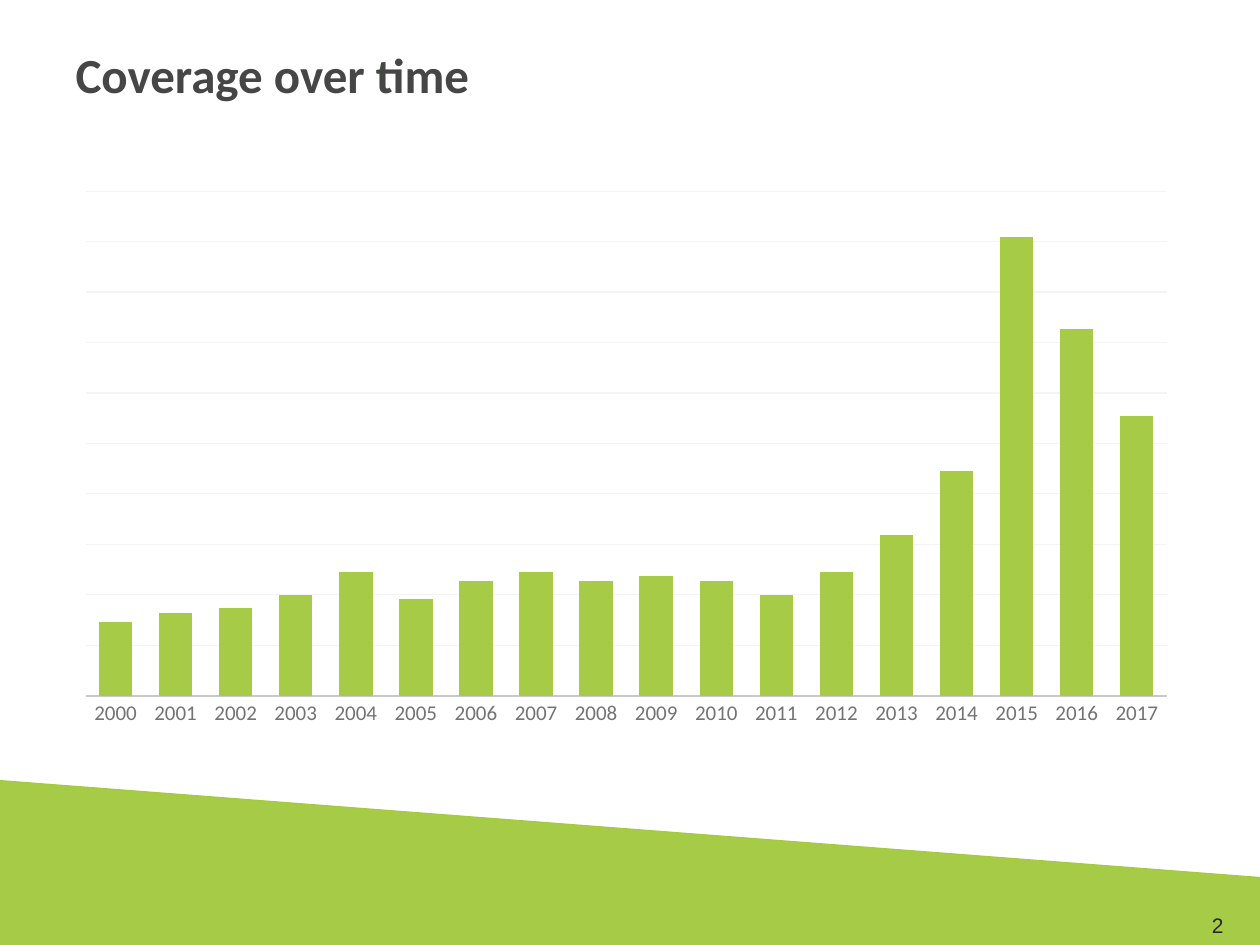
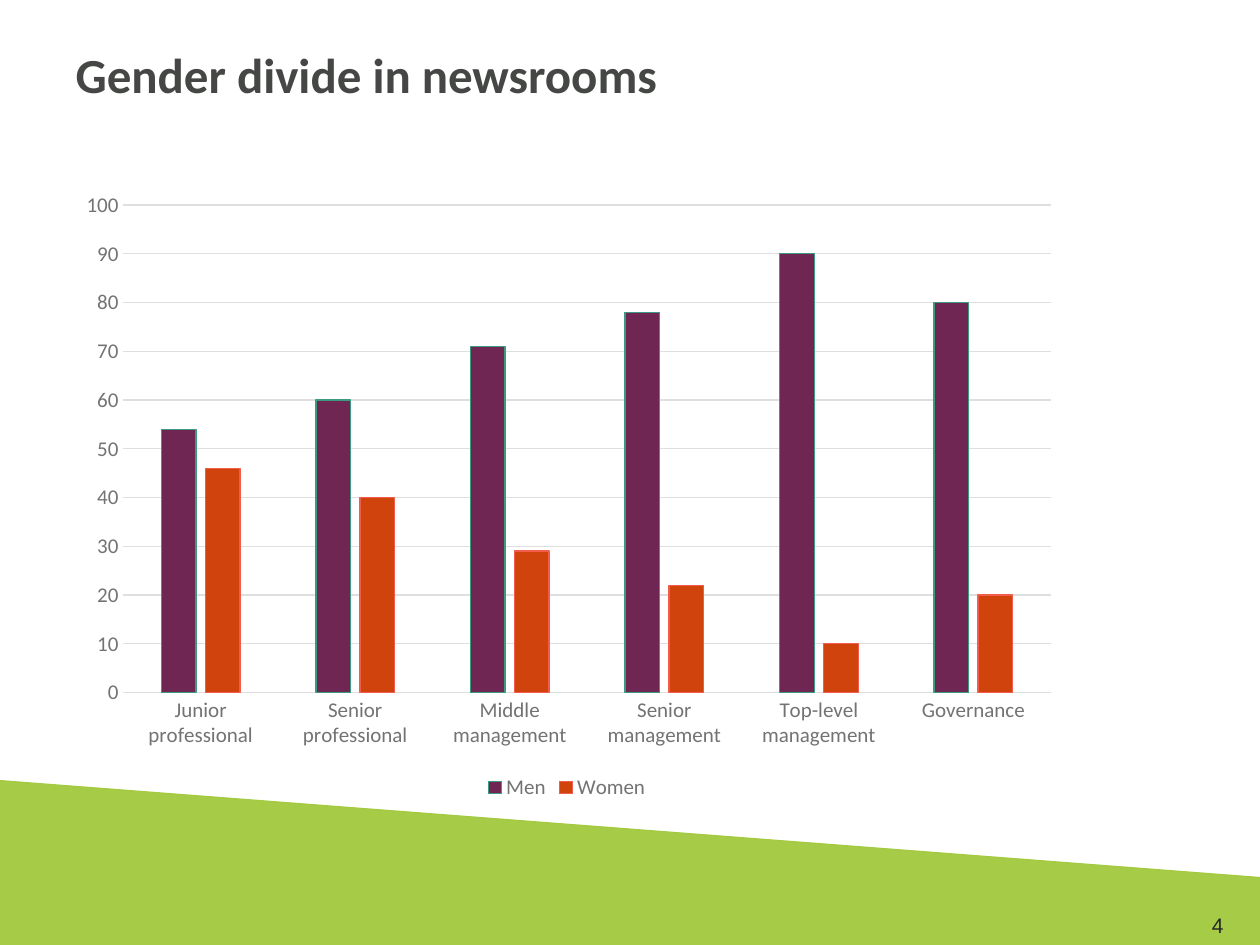
from dataclasses import dataclass

import pptx
import pptx.chart.data
import pptx.dml.color
import pptx.enum.chart
import pptx.enum.shapes
import pptx.enum.text
import pptx.oxml
import pptx.oxml.ns
import pptx.util

Inches = pptx.util.Inches
Pt = pptx.util.Pt


@dataclass(frozen=True)
class Theme:
    font: str = "Calibri"
    number_font: str = "Arial"
    title_size: int = 28
    label_size: int = 12
    chart_size: int = 10
    hairline: float = 0.75
    title: str = "454745"
    text: str = "272727"
    label: str = "737373"
    green: str = "A6CB46"
    green_edge: str = "A4CA41"
    pale_grid: str = "F4F4F4"
    grid: str = "DFDFDF"
    baseline: str = "C9C9C9"
    men: str = "702652"
    men_edge: str = "3C9A80"
    women: str = "D0430C"
    women_edge: str = "F15D4A"


THEME = Theme()


def rgb(color):
    return pptx.dml.color.RGBColor.from_string(color)


def box(left, top, width, height):
    return Inches(left), Inches(top), Inches(width), Inches(height)


def style_font(font, size, color, name=THEME.font, bold=False):
    font.name = name
    font.size = Pt(size)
    font.bold = bold
    font.color.rgb = rgb(color)


def style_line(line, color, width=THEME.hairline):
    line.color.rgb = rgb(color)
    line.width = Pt(width)


def add_band(slide):
    band = slide.shapes.add_shape(
        pptx.enum.shapes.MSO_SHAPE.RECTANGLE, *box(-0.27, 6.58, 10.47, 1.33))
    band.rotation = 4.4
    band.shadow.inherit = False
    band.fill.solid()
    band.fill.fore_color.rgb = rgb(THEME.green)
    style_line(band.line, THEME.green_edge)


def set_title(slide, wording):
    title = slide.shapes.title
    title.left, title.top, title.width, title.height = box(0.5, 0.3, 9, 0.87)
    title.text = wording
    title.text_frame.vertical_anchor = pptx.enum.text.MSO_ANCHOR.TOP
    paragraph = title.text_frame.paragraphs[0]
    paragraph.alignment = pptx.enum.text.PP_ALIGN.LEFT
    style_font(paragraph.font, THEME.title_size, THEME.title, bold=True)


def add_page_number(slide, number):
    frame = slide.shapes.add_textbox(*box(9.33, 7.19, 0.67, 0.31)).text_frame
    frame.word_wrap = True
    frame.vertical_anchor = pptx.enum.text.MSO_ANCHOR.MIDDLE
    paragraph = frame.paragraphs[0]
    paragraph.text = str(number)
    paragraph.alignment = pptx.enum.text.PP_ALIGN.CENTER
    style_font(paragraph.font, THEME.label_size, THEME.text, THEME.number_font)


def add_content_slide(deck, wording, number):
    slide = deck.slides.add_slide(deck.slide_layouts[5])
    add_band(slide)
    set_title(slide, wording)
    add_page_number(slide, number)
    return slide


def set_plot_area(chart, **fractions):
    plot_area = chart._chartSpace.chart.plotArea
    for old_layout in plot_area.findall(pptx.oxml.ns.qn("c:layout")):
        plot_area.remove(old_layout)
    places = "".join(
        f'<c:{side} val="{value}"/>' for side, value in fractions.items())
    plot_area.insert(0, pptx.oxml.parse_xml(
        f'<c:layout {pptx.oxml.ns.nsdecls("c")}><c:manualLayout>'
        '<c:layoutTarget val="inner"/><c:xMode val="edge"/><c:yMode val="edge"/>'
        f'{places}</c:manualLayout></c:layout>'))


def style_axis(axis):
    axis.major_tick_mark = pptx.enum.chart.XL_TICK_MARK.NONE
    axis.minor_tick_mark = pptx.enum.chart.XL_TICK_MARK.NONE
    style_font(axis.tick_labels.font, THEME.label_size, THEME.label)


def add_column_chart(slide, place, categories, series, gap, overlap,
                     top_value, step, grid_color):
    data = pptx.chart.data.CategoryChartData()
    data.categories = categories
    for name, values, _, _ in series:
        data.add_series(name, values)
    chart = slide.shapes.add_chart(
        pptx.enum.chart.XL_CHART_TYPE.COLUMN_CLUSTERED, *box(*place), data).chart
    chart.has_title = False
    chart.has_legend = False
    style_font(chart.font, THEME.chart_size, THEME.text)

    plot = chart.plots[0]
    plot.vary_by_categories = False
    plot.gap_width = gap
    plot.overlap = overlap
    for columns, (_, _, fill, edge) in zip(plot.series, series):
        columns.format.fill.solid()
        columns.format.fill.fore_color.rgb = rgb(fill)
        if edge:
            style_line(columns.format.line, edge)
        else:
            columns.format.line.fill.background()

    style_axis(chart.category_axis)
    value_axis = chart.value_axis
    style_axis(value_axis)
    value_axis.minimum_scale = 0
    value_axis.maximum_scale = top_value
    value_axis.major_unit = step
    value_axis.format.line.fill.background()
    style_line(value_axis.major_gridlines.format.line, grid_color)
    return chart


def add_legend(chart):
    chart.has_legend = True
    chart.legend.position = pptx.enum.chart.XL_LEGEND_POSITION.BOTTOM
    chart.legend.include_in_layout = False
    style_font(chart.legend.font, THEME.label_size, THEME.label)


def build_coverage(deck):
    slide = add_content_slide(deck, "Coverage over time", 2)
    years = [str(year) for year in range(2000, 2018)]
    coverage = (16, 18, 19, 22, 27, 21, 25, 27, 25,
                26, 25, 22, 27, 35, 49, 100, 80, 61)
    chart = add_column_chart(
        slide, (0.5, 1.43, 8.94, 4.4), years,
        [("Series 1", coverage, THEME.green, None)],
        gap=80, overlap=25, top_value=110, step=11, grid_color=THEME.pale_grid)
    chart.value_axis.visible = False
    style_line(chart.category_axis.format.line, THEME.baseline, 1.25)
    set_plot_area(chart, x=0.02, y=0.02, w=0.96, h=0.91)


def build_gender_divide(deck):
    slide = add_content_slide(deck, "Gender divide in newsrooms", 4)
    job_levels = ["Junior professional", "Senior professional",
                  "Middle management", "Senior management",
                  "Top-level management", "Governance"]
    men = (54, 60, 71, 78, 90, 80)
    women = tuple(100 - share for share in men)
    chart = add_column_chart(
        slide, (0.5, 1.43, 8, 4.96), job_levels,
        [("Men", men, THEME.men, THEME.men_edge),
         ("Women", women, THEME.women, THEME.women_edge)],
        gap=219, overlap=-27, top_value=100, step=10, grid_color=THEME.grid)
    style_line(chart.category_axis.format.line, THEME.grid)
    add_legend(chart)
    set_plot_area(chart, x=0.06, y=0.04, w=0.92, h=0.78)


def main():
    deck = pptx.Presentation()
    deck.slide_width = Inches(10)
    deck.slide_height = Inches(7.5)
    build_coverage(deck)
    build_gender_divide(deck)
    deck.save("out.pptx")


if __name__ == "__main__":
    main()
